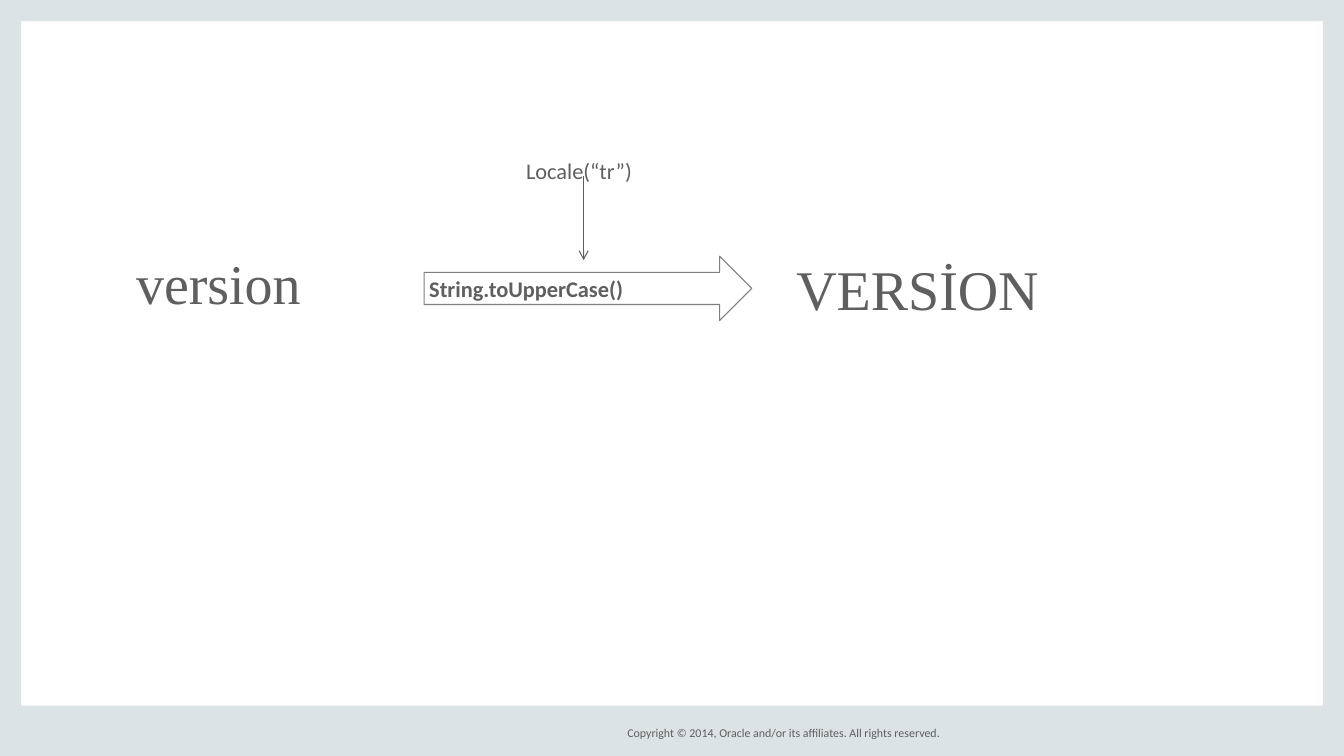
"""Build the slide on upper-casing a word under the Turkish locale."""
import pptx
import pptx.dml.color
import pptx.enum.shapes
import pptx.enum.text
import pptx.oxml
import pptx.oxml.ns
import pptx.util

Pt = pptx.util.Pt
RGBColor = pptx.dml.color.RGBColor
SHAPE = pptx.enum.shapes.MSO_SHAPE
ALIGN = pptx.enum.text.PP_ALIGN
ANCHOR = pptx.enum.text.MSO_ANCHOR

TEXT_GRAY = RGBColor(0x5F, 0x5F, 0x5F)
OUTLINE_GRAY = RGBColor(0x7F, 0x7F, 0x7F)
FRAME_GRAY = RGBColor(0xDC, 0xE3, 0xE4)

WIDTH, HEIGHT = 960, 540
BORDER, FOOTER = 15.1, 36

WORD = {"name": "Times New Roman", "size": Pt(40)}
LABEL = {"name": "Calibri", "size": Pt(16)}
METHOD = {**LABEL, "bold": True}
COPYRIGHT = {"name": "Calibri", "size": Pt(8.5)}


class SlideBuilder:
    def __init__(self, slide, line_width=0.75):
        self.slide = slide
        self.line_width = Pt(line_width)

    def set_wording(self, shape, wording, font, margins, align=ALIGN.LEFT,
                    anchor=ANCHOR.TOP, wrap=True):
        side, edge = map(Pt, margins)
        frame = shape.text_frame
        layout = {"margin_left": side, "margin_right": side, "margin_top": edge,
                  "margin_bottom": edge, "word_wrap": wrap, "vertical_anchor": anchor}
        for attribute, value in layout.items():
            setattr(frame, attribute, value)
        paragraph = frame.paragraphs[0]
        paragraph.text = wording
        paragraph.alignment = align
        for attribute, value in font.items():
            setattr(paragraph.font, attribute, value)
        paragraph.font.color.rgb = TEXT_GRAY

    def text(self, box, wording, font, margins=(3.6, 1.44), **layout):
        area = self.slide.shapes.add_textbox(*map(Pt, box))
        self.set_wording(area, wording, font, margins, **layout)

    def band(self, box):
        strip = self.slide.shapes.add_shape(SHAPE.RECTANGLE, *map(Pt, box))
        strip.shadow.inherit = False
        strip.fill.solid()
        strip.fill.fore_color.rgb = FRAME_GRAY
        strip.line.fill.background()

    def block_arrow(self, box, wording, font):
        call = self.slide.shapes.add_shape(SHAPE.RIGHT_ARROW, *map(Pt, box))
        call.shadow.inherit = False
        call.fill.background()
        call.line.color.rgb = OUTLINE_GRAY
        call.line.width = self.line_width
        self.set_wording(call, wording, font, (3.6, 2.16))

    def arrow(self, start, end):
        pointer = self.slide.shapes.add_connector(
            pptx.enum.shapes.MSO_CONNECTOR.STRAIGHT, *map(Pt, start + end))
        pointer.line.color.rgb = TEXT_GRAY
        pointer.line.width = self.line_width
        namespace = pptx.oxml.ns.nsdecls("a")
        properties = pointer._element.spPr
        properties.find(pptx.oxml.ns.qn("a:ln")).append(
            pptx.oxml.parse_xml(f'<a:tailEnd {namespace} type="arrow"/>'))
        properties.append(pptx.oxml.parse_xml(f"<a:effectLst {namespace}/>"))


def main():
    deck = pptx.Presentation()
    deck.slide_width, deck.slide_height = Pt(WIDTH), Pt(HEIGHT)
    builder = SlideBuilder(deck.slides.add_slide(deck.slide_layouts[6]))

    for box in ((0, 0, BORDER, HEIGHT),
                (WIDTH - BORDER, 0, BORDER, HEIGHT),
                (0, HEIGHT - FOOTER, WIDTH, FOOTER),
                (0, 0, WIDTH, BORDER)):
        builder.band(box)
    builder.text((423, 516.5, 248.5, 14.4),
                 "Copyright © 2014, Oracle and/or its affiliates. All rights reserved.",
                 COPYRIGHT, margins=(0, 0), align=ALIGN.RIGHT,
                 anchor=ANCHOR.MIDDLE, wrap=False)

    builder.text((93.6, 176.4, 188.6, 51.8), "version", WORD)
    builder.block_arrow((303, 183, 234, 46), "String.toUpperCase()", METHOD)
    builder.text((565.2, 180, 236.9, 51.8), "VERSİON", WORD)
    builder.arrow((416.9, 126), (416.9, 185.8))
    builder.text((372.2, 110.9, 95.8, 23), "Locale(“tr”)", LABEL)

    deck.save("out.pptx")


if __name__ == "__main__":
    main()
